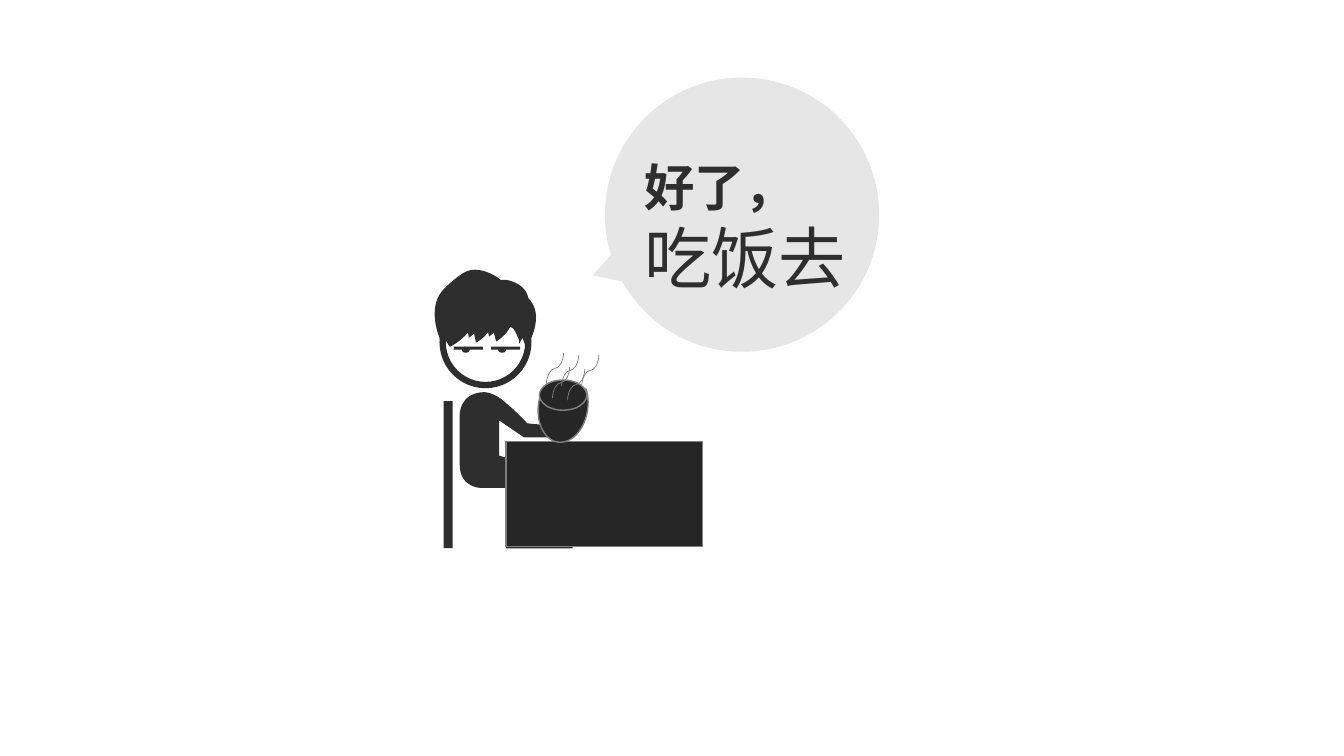
from lxml.etree import SubElement
from pptx import Presentation
from pptx.dml.color import RGBColor
from pptx.enum.shapes import MSO_CONNECTOR, MSO_SHAPE
from pptx.enum.text import MSO_AUTO_SIZE
from pptx.oxml.ns import qn
from pptx.util import Inches, Pt

COLORS = {"ink": "2E2E2E", "dark": "262626", "edge": "808080",
          "bubble": "E6E6E6", "white": "FFFFFF"}


class Scene:
    def __init__(self, slide):
        self.shapes = slide.shapes

    def color(self, name):
        return RGBColor.from_string(COLORS[name])

    def paint(self, shape, fill, edge=None, width=1):
        shape.shadow.inherit = False
        shape.fill.solid()
        shape.fill.fore_color.rgb = self.color(fill)
        if edge:
            shape.line.color.rgb = self.color(edge)
            shape.line.width = Pt(width)
        else:
            shape.line.fill.background()

    def shape(self, kind, box, fill="ink", edge=None, width=1, turn=0):
        shape = self.shapes.add_shape(kind, *map(Inches, box))
        shape.rotation = turn
        self.paint(shape, fill, edge, width)
        return shape

    def outline(self, start, parts):
        """Draw an outline: a part is (x, y) or a curve of three points."""
        flat = [Inches(n) for part in parts for n in part]
        pen = self.shapes.build_freeform(*map(Inches, start))
        pen.add_line_segments(list(zip(flat[::2], flat[1::2])), close=True)
        shape = pen.convert_to_shape()
        self.paint(shape, "ink")
        # Join the three steps of each curve into one
        steps = iter(list(shape._element.iter(qn("a:lnTo"))))
        for part in parts:
            step = next(steps)
            if len(part) == 6:
                step.tag = qn("a:cubicBezTo")
                for more in (next(steps), next(steps)):
                    step.append(more[0])
                    more.getparent().remove(more)

    def steam(self, x, y, w, h):
        """A curve rising from the lower left (x, y) by w and h."""
        left, top = x + (w - h) / 2, y - (w + h) / 2
        ends = (left + h, top + w, left, top)
        line = self.shapes.add_connector(MSO_CONNECTOR.CURVE, *map(Inches, ends))
        line.line.color.rgb = self.color("edge")
        line.line.width = Pt(0.5)
        props = line._element.spPr
        props.find(qn("a:xfrm")).set("rot", str(90 * 60000))
        SubElement(props, qn("a:effectLst"))

    def text(self, box, lines):
        frame = self.shapes.add_textbox(*map(Inches, box)).text_frame
        frame.word_wrap = False
        frame.auto_size = MSO_AUTO_SIZE.SHAPE_TO_FIT_TEXT
        for i, (words, size, face, bold) in enumerate(lines):
            para = frame.add_paragraph() if i else frame.paragraphs[0]
            para.text = words
            font = para.font
            font.size, font.name, font.bold = Pt(size), face, bold
            font.color.rgb = self.color("ink")


def main():
    deck = Presentation()
    deck.slide_width, deck.slide_height = Inches(13.33), Inches(7.5)
    scene = Scene(deck.slides.add_slide(deck.slide_layouts[6]))
    rect, oval = MSO_SHAPE.RECTANGLE, MSO_SHAPE.OVAL

    # Chair back
    scene.shape(rect, (4.4, 3.98, 0.09, 1.46))

    # Body and hand
    scene.outline((4.8, 3.89), [
        (4.8, 3.89, 4.91, 3.89, 5.02, 4), (5.13, 4.09, 5.23, 4.2, 5.23, 4.2),
        (5.55, 4.23), (5.55, 4.34), (5.2, 4.34), (4.95, 4.17), (4.95, 4.52),
        (5.02, 4.54), (5.02, 4.39), (5.68, 4.39), (5.68, 5.44), (5.02, 5.44),
        (5.02, 4.84), (4.77, 4.84), (4.77, 4.84, 4.56, 4.84, 4.56, 4.61),
        (4.56, 4.43, 4.56, 4.12, 4.56, 4.12), (4.56, 4.12, 4.55, 3.9, 4.8, 3.89)])
    scene.outline((5.35, 4), [(5.4, 3.98), (5.47, 4.19), (5.41, 4.18), (5.35, 4)])

    # Head
    scene.shape(oval, (4.39, 2.97, 0.85, 0.85), "white", "ink", 4.5)

    # Back hair
    scene.outline((4.68, 3.25), [
        (4.71, 3.31, 4.72, 3.4, 4.72, 3.4), (4.72, 3.4, 4.82, 3.35, 4.87, 3.25),
        (4.91, 3.31, 4.92, 3.39, 4.92, 3.39), (4.92, 3.39, 5.03, 3.32, 5.06, 3.24),
        (5.15, 3.29, 5.19, 3.35, 5.21, 3.43), (5.21, 3.43, 5.22, 3.44, 5.22, 3.44),
        (5.22, 3.45),
        (5.22, 3.45, 5.26, 3.39, 5.29, 3.3), (5.32, 3.21, 5.34, 3.08, 5.26, 2.98),
        (5.18, 2.88, 5.05, 2.88, 4.98, 2.9), (4.91, 2.85, 4.84, 2.83, 4.76, 2.83),
        (4.58, 2.83, 4.44, 2.96, 4.43, 2.97), (4.25, 3.13, 4.44, 3.41, 4.46, 3.44),
        (4.47, 3.44, 4.6, 3.37, 4.68, 3.25)])

    # Eyelids
    for x in (4.5, 4.87):
        scene.shape(rect, (x, 3.44, 0.29, 0.03))

    # Front hair
    scene.outline((4.6, 3.19), [
        (4.64, 3.25, 4.65, 3.35, 4.65, 3.35), (4.65, 3.35, 4.75, 3.29, 4.8, 3.19),
        (4.84, 3.25, 4.85, 3.34, 4.85, 3.34), (4.85, 3.34, 4.96, 3.26, 4.99, 3.17),
        (5.09, 3.23, 5.12, 3.3, 5.15, 3.38), (5.15, 3.39, 5.15, 3.39, 5.15, 3.4),
        (5.15, 3.41),
        (5.15, 3.41, 5.19, 3.34, 5.23, 3.25), (5.26, 3.13, 5.26, 2.97, 5.22, 2.9),
        (5.18, 2.82, 5.04, 2.76, 4.97, 2.78), (4.9, 2.72, 4.77, 2.66, 4.67, 2.68),
        (4.58, 2.69, 4.42, 2.85, 4.41, 2.86), (4.22, 3.04, 4.36, 3.37, 4.38, 3.39),
        (4.39, 3.39, 4.52, 3.32, 4.6, 3.19)])

    # Pupils
    for x in (4.58, 4.94):
        scene.shape(oval, (x, 3.44, 0.08, 0.06))

    # Speech bubble
    scene.shape(oval, (6, 0.77, 2.72, 2.72), "bubble", turn=34.1)
    scene.shape(MSO_SHAPE.ISOSCELES_TRIANGLE, (5.82, 2.35, 0.67, 0.58),
                "bubble", turn=251.5)
    scene.text((6.29, 1.5, 2.22, 1.51), [
        ("好了，", 36, "Calibri", True),
        ("吃饭去", 48, "Noto Sans CJK TC", False)])

    # Desk
    scene.shape(rect, (5.02, 4.38, 1.95, 1.04), "dark", "edge")

    # Bowl
    bowl = scene.shape(MSO_SHAPE.CHORD, (5.23, 3.79, 0.71, 0.49),
                       "dark", "edge", turn=278.6)
    bowl.adjustments[0], bowl.adjustments[1] = 26.22, 179.11
    scene.shape(oval, (5.35, 3.77, 0.47, 0.3), "dark", "edge")

    # Steam
    for x, y in ((5.42, 3.81), (5.57, 3.83), (5.77, 3.83),
                 (5.48, 3.95), (5.63, 3.97)):
        scene.steam(x, y, 0.17, 0.31)

    deck.save("out.pptx")


if __name__ == "__main__":
    main()
